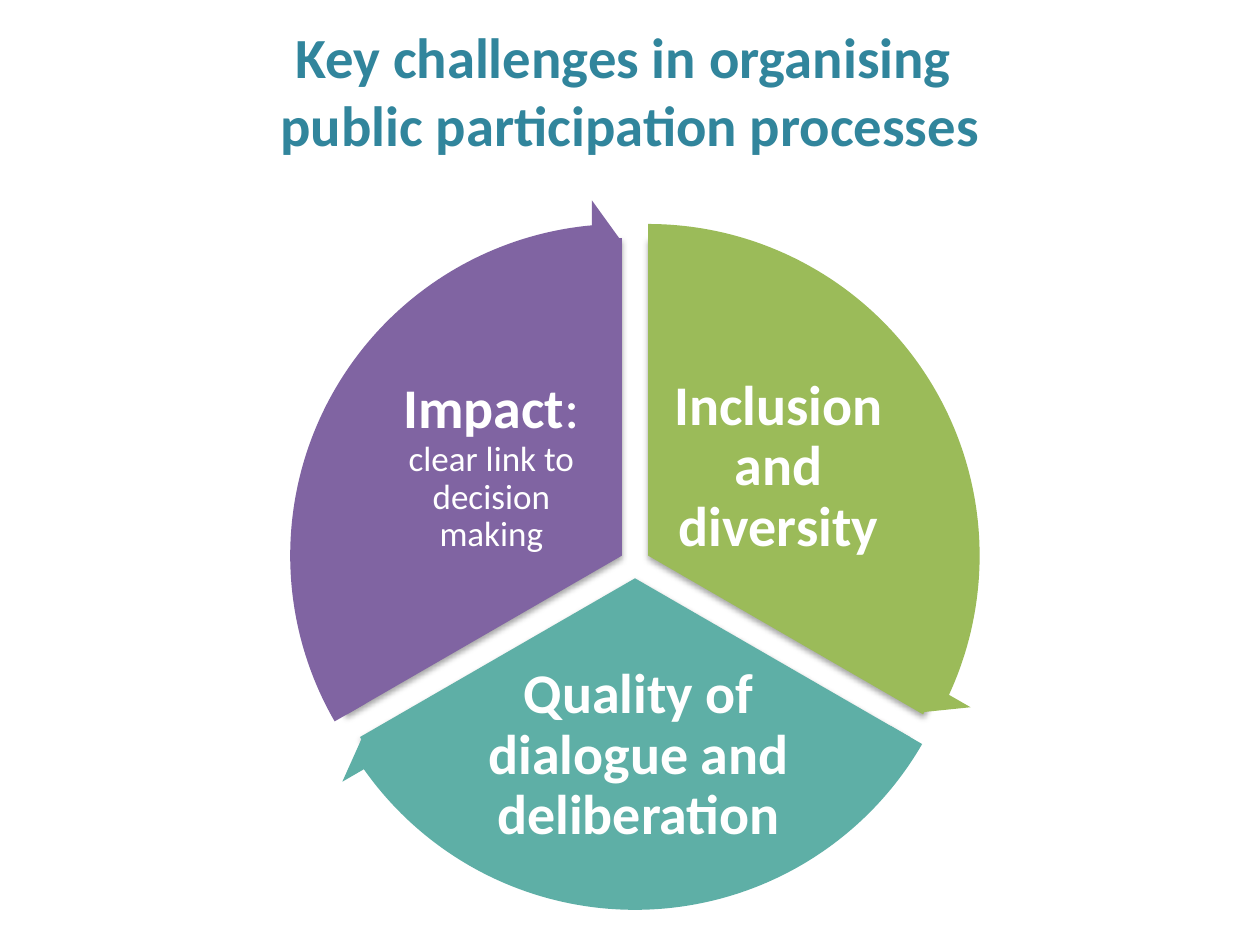
import math
from dataclasses import dataclass

import lxml.etree
import pptx
import pptx.dml.color
import pptx.enum.shapes
import pptx.enum.text
import pptx.oxml
import pptx.oxml.ns
import pptx.util

Inches = pptx.util.Inches
Shape = pptx.enum.shapes.MSO_SHAPE


@dataclass(frozen=True)
class Theme:
    font: str = "Calibri"
    title: str = "31859C"
    label: str = "FFFFFF"
    green: str = "9BBB59"
    teal: str = "5EAFA6"
    purple: str = "8064A2"
    title_size: float = 32.4
    label_size: int = 32
    detail_size: int = 20


class CycleSlide:
    center = (5.04, 4.47)
    slice_gap = 0.12
    pie_size = 5.04
    arrow_size = 5.66
    arrow_thickness = 0.05
    arrowhead_angle = 3.28
    arrowhead_width = 0.06
    sweep = 72

    def __init__(self, page, theme):
        self.page = page
        self.theme = theme
        self.cycle = page.shapes.add_group_shape()

    def text(self, shapes, place, runs, color, inset=None, line_spacing=None):
        box = shapes.add_textbox(*[Inches(value) for value in place])
        frame = box.text_frame
        frame.word_wrap = True
        frame.vertical_anchor = pptx.enum.text.MSO_ANCHOR.MIDDLE
        if inset is not None:
            frame.margin_left = frame.margin_right = Inches(inset)
            frame.margin_top = frame.margin_bottom = Inches(inset)
        para = frame.paragraphs[0]
        para.alignment = pptx.enum.text.PP_ALIGN.CENTER
        para.line_spacing = line_spacing
        for words, size, bold in runs:
            first = len(para.runs)
            if first == 0:
                para.text = words
            else:
                para.add_run().text = words
            for span in para.runs[first:]:
                span.font.name = self.theme.font
                span.font.size = pptx.util.Pt(size)
                span.font.bold = bold
                span.font.color.rgb = pptx.dml.color.RGBColor.from_string(color)

    def title(self, words):
        runs = [(words, self.theme.title_size, True)]
        self.text(self.page.shapes, (0.5, 0.17, 9, 1.08), runs, self.theme.title)

    def label(self, place, runs):
        self.text(self.cycle.shapes, place, runs, self.theme.label, 0.04, 0.9)

    def sector(self, kind, size, start, color, adjustments):
        middle = math.radians((start + self.sweep / 2) * 360 / 216)
        left = self.center[0] + self.slice_gap * math.cos(middle) - size / 2
        top = self.center[1] + self.slice_gap * math.sin(middle) - size / 2
        shape = self.cycle.shapes.add_shape(
            kind, Inches(left), Inches(top), Inches(size), Inches(size))
        for index, value in enumerate(adjustments):
            shape.adjustments[index] = value
        shape.fill.solid()
        shape.fill.fore_color.rgb = pptx.dml.color.RGBColor.from_string(color)
        shape.line.fill.background()
        shape.shadow.inherit = False
        return shape

    def pie(self, start, color):
        end = (start + self.sweep) % 216
        shape = self.sector(Shape.PIE, self.pie_size, start, color, (start, end))
        effects = shape.element.spPr.find(pptx.oxml.ns.qn("a:effectLst"))
        effects.append(pptx.oxml.parse_xml(
            f'<a:outerShdw {pptx.oxml.ns.nsdecls("a")} blurRad="40000" '
            'dist="23000" dir="5400000" rotWithShape="0">'
            '<a:srgbClr val="000000"><a:alpha val="35000"/></a:srgbClr>'
            '</a:outerShdw>'))

    def arrow(self, start, color):
        end = (start + self.sweep) % 216 - self.arrowhead_angle
        self.sector(Shape.CIRCULAR_ARROW, self.arrow_size, start, color,
                    (self.arrow_thickness, self.arrowhead_angle, end, start,
                     self.arrowhead_width))


def main():
    deck = pptx.Presentation()
    deck.slide_width = Inches(10)
    deck.slide_height = Inches(7.5)
    theme = Theme()
    slide = CycleSlide(deck.slides.add_slide(deck.slide_layouts[6]), theme)
    slide.title("Key challenges in organising \vpublic participation processes")

    challenges = [
        (162, theme.green, (5.28, 2.96, 1.8, 1.5),
         [("Inclusion and diversity", theme.label_size, True)]),
        (18, theme.teal, (3.72, 5.34, 2.7, 1.32),
         [("Quality of dialogue and deliberation", theme.label_size, True)]),
        (90, theme.purple, (3, 2.96, 1.8, 1.5),
         [("Impact", theme.label_size, True),
          (": ", theme.label_size, False),
          ("clear link to decision making", theme.detail_size, False)]),
    ]
    for start, color, place, runs in challenges:
        slide.pie(start, color)
        slide.label(place, runs)
    for start, color, place, runs in challenges:
        slide.arrow(start, color)
    deck.save("out.pptx")


if __name__ == "__main__":
    main()
